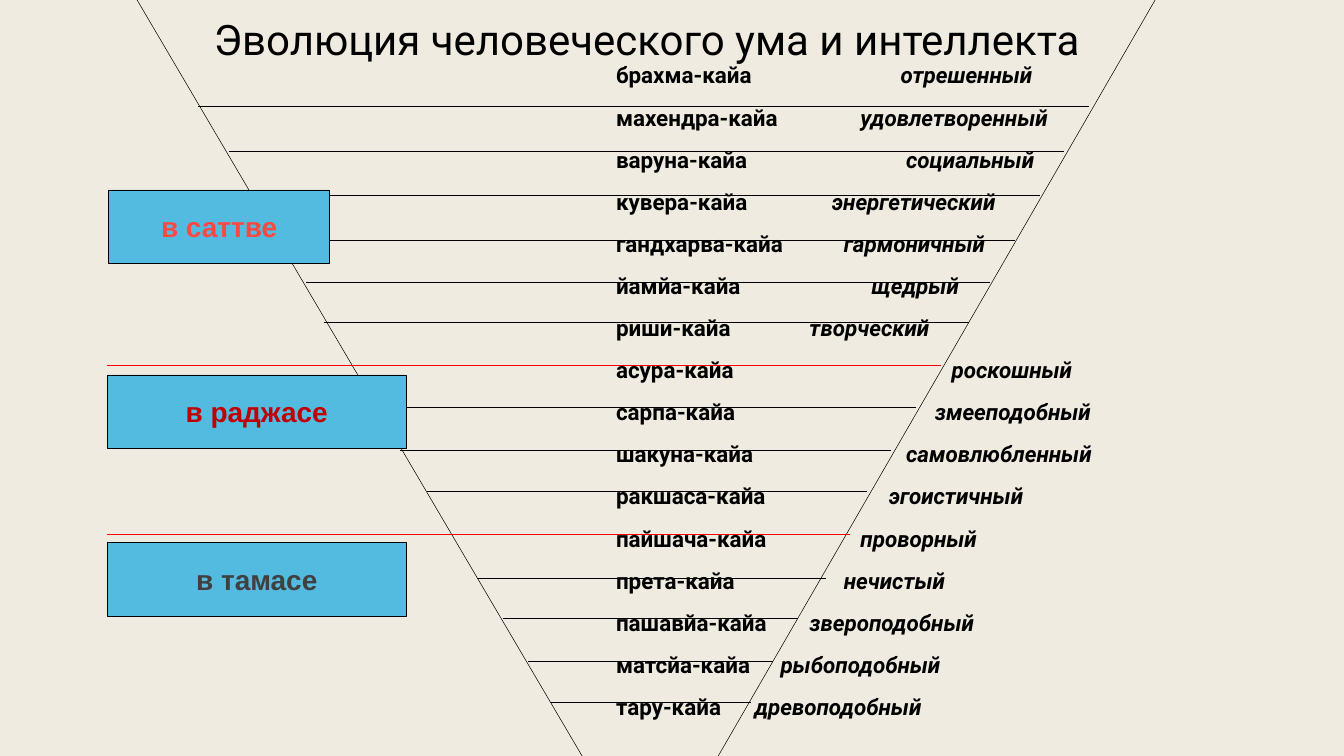
from lxml import etree
from pptx import Presentation
from pptx import util as u
from pptx.dml.color import RGBColor
from pptx.enum import shapes, text
from pptx.oxml.ns import qn

Cm, Pt = u.Cm, u.Pt


def rgb(value):
    return RGBColor.from_string(value)


def add_run(p, txt, size=32, font="Roboto", color="000000", bold=True, italic=False):
    r = p.add_run()
    r.text = txt
    r.font.size = Pt(size)
    r.font.name = font
    r.font.bold = bold
    r.font.italic = italic
    r.font.color.rgb = rgb(color)


prs = Presentation()
prs.slide_width, prs.slide_height = Cm(67.74), Cm(38.1)
s = prs.slides.add_slide(prs.slide_layouts[5])
s.background.fill.solid()
s.background.fill.fore_color.rgb = rgb("F0EBE0")

title = s.shapes.title
title.left, title.top, title.width, title.height = Cm(9.3), Cm(0.53), Cm(46.61), Cm(2.84)
tf = title.text_frame
tf.word_wrap = True
tf.auto_size = text.MSO_AUTO_SIZE.NONE
tf.vertical_anchor = text.MSO_ANCHOR.MIDDLE
tf.margin_left = tf.margin_right = tf.margin_top = tf.margin_bottom = Cm(0.15)
p = tf.paragraphs[0]
p.alignment = text.PP_ALIGN.CENTER
p.space_before = Pt(10)
add_run(p, "Эволюция человеческого ума и интеллекта", size=60, bold=False)

BLACK, RED = "000000", "FF0000"
levels = [
    (5.38, 9.96, 54.89, BLACK),
    (7.62, 11.53, 53.64, BLACK),
    (9.86, 12.73, 52.4, BLACK),
    (12.09, 14.02, 51.16, BLACK),
    (14.25, 15.44, 49.91, BLACK),
    (16.23, 16.33, 48.82, BLACK),
    (18.39, 5.41, 47.42, RED),
    (20.52, 19.05, 46.18, BLACK),
    (22.68, 20.17, 44.93, BLACK),
    (24.74, 21.54, 43.69, BLACK),
    (26.9, 5.41, 42.85, RED),
    (29.13, 24.03, 41.61, BLACK),
    (31.14, 25.35, 40.21, BLACK),
    (33.32, 26.62, 38.96, BLACK),
    (35.41, 27.79, 37.87, BLACK),
]
lines = [(6.91, 0, 29.34, 38.1, BLACK), (36.2, 38.1, 58.22, 0, BLACK)]
lines += [(x1, y, x2, y, color) for y, x1, x2, color in levels]
funnel = s.shapes.add_group_shape()
for x1, y1, x2, y2, color in lines:
    c = funnel.shapes.add_connector(
        shapes.MSO_CONNECTOR.STRAIGHT, Cm(x1), Cm(y1), Cm(x2), Cm(y2))
    c.line.color.rgb = rgb(color)
    c.line.width = Pt(0.75)
    etree.SubElement(c._element.spPr, qn("a:effectLst"))

NAME_TAB = 7.58
rows = [
    ("брахма-кайа", "отрешенный", 21.92),
    ("махендра-кайа", "удовлетворенный", 19.9),
    ("варуна-кайа", "социальный", 22.2),
    ("кувера-кайа", "энергетический", 18.46),
    ("гандхарва-кайа", "гармоничный", 19.06),
    ("йамйа-кайа", "щедрый", 20.46),
    ("риши-кайа", "творческий", 17.33),
    ("асура-кайа", "роскошный", 24.49),
    ("сарпа-кайа", "змееподобный", 23.65),
    ("шакуна-кайа", "самовлюбленный", 22.2),
    ("ракшаса-кайа", "эгоистичный", 21.33),
    ("пайшача-кайа", "проворный", 19.9),
    ("прета-кайа", "нечистый", 19.06),
    ("пашавйа-кайа", "звероподобный", 17.33),
    ("матсйа-кайа", "рыбоподобный", 15.87),
    ("тару-кайа", "древоподобный", 14.56),
]
sp = s.shapes.add_textbox(Cm(23.22), Cm(0.38), Cm(37.06), Cm(37.57))
tf = sp.text_frame
tf.word_wrap = True
tf.margin_left = tf.margin_right = Cm(0.25)
tf.margin_top = Cm(2.18)
for i, (name, quality, quality_tab) in enumerate(rows):
    p = tf.add_paragraph() if i else tf.paragraphs[0]
    p.line_spacing = 1.4
    p.space_after = Pt(6.4)
    tabs = etree.SubElement(p._p.get_or_add_pPr(), qn("a:tabLst"))
    for pos in (NAME_TAB, quality_tab):
        etree.SubElement(tabs, qn("a:tab"), pos=str(Cm(pos)), algn="l")
    add_run(p, "\t" + name + "\t")
    add_run(p, quality, italic=True)

labels = [
    ("в тамасе", 5.41, 27.35, 15.06, "404040"),
    ("в раджасе", 5.41, 18.89, 15.06, "C00000"),
    ("в саттве", 5.47, 9.57, 11.15, "FF4741"),
]
for label, x, y, w, color in labels:
    sp = s.shapes.add_shape(shapes.MSO_SHAPE.RECTANGLE, Cm(x), Cm(y), Cm(w), Cm(3.71))
    sp.shadow.inherit = False
    sp.fill.solid()
    sp.fill.fore_color.rgb = rgb("53BBE0")
    sp.line.color.rgb = rgb(BLACK)
    sp.line.width = Pt(0.75)
    tf = sp.text_frame
    tf.word_wrap = False
    tf.vertical_anchor = text.MSO_ANCHOR.MIDDLE
    p = tf.paragraphs[0]
    p.alignment = text.PP_ALIGN.CENTER
    p.space_before = Pt(10)
    add_run(p, label, size=40, font="Arial", color=color)

prs.save("out.pptx")
